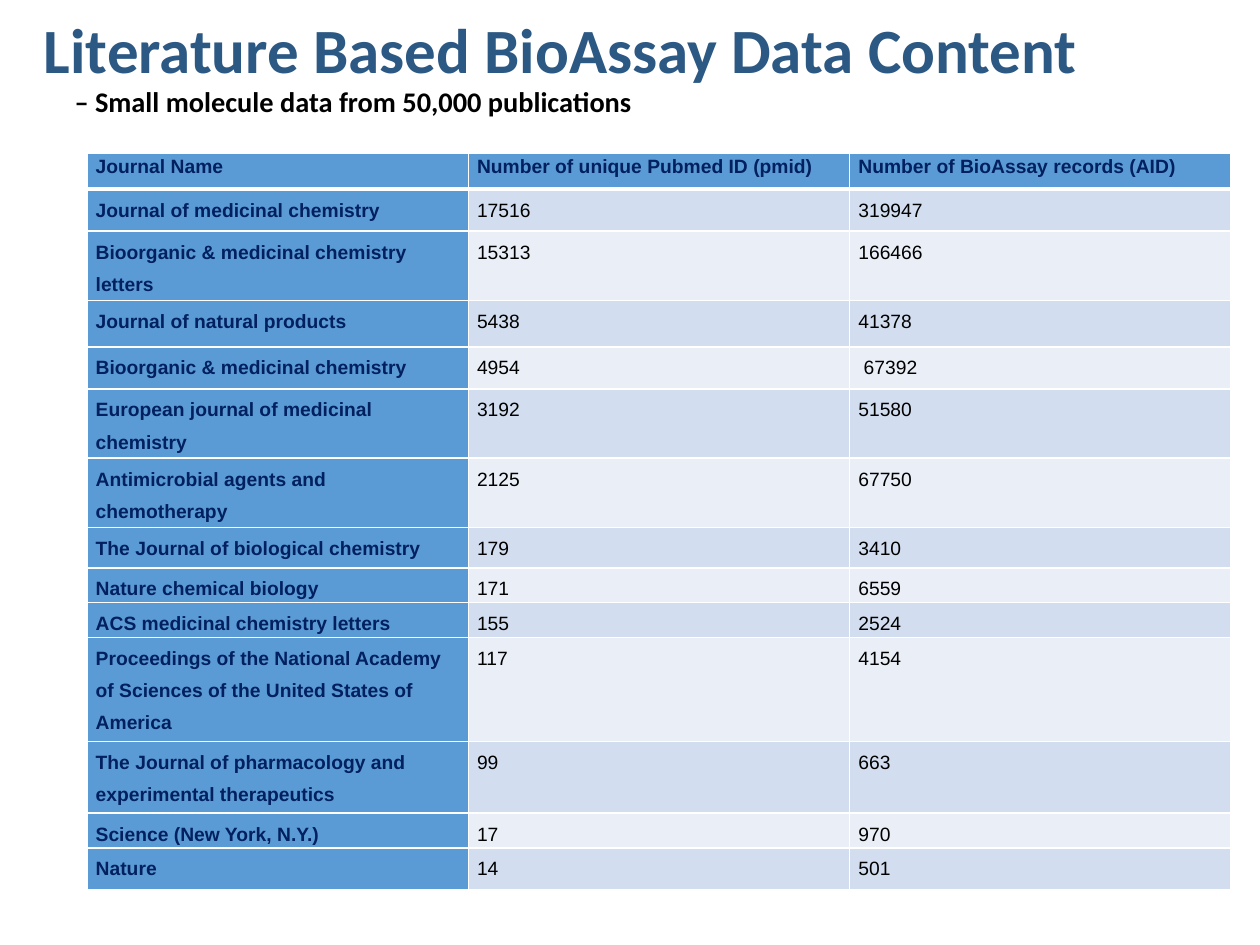
from dataclasses import dataclass

import pptx
import pptx.dml.color
import pptx.enum.text
import pptx.oxml
import pptx.oxml.ns
import pptx.util

Pt = pptx.util.Pt


@dataclass(frozen=True)
class Theme:
    title: str = "2C5884"
    black: str = "000000"
    navy: str = "002060"
    header: str = "5B9BD5"
    odd_row: str = "D2DEEF"
    even_row: str = "EAEFF7"
    border: str = "FFFFFF"
    title_size: float = 36
    subtitle_size: float = 16.2
    table_size: float = 11


theme = Theme()


def write(paragraph, text, color, paragraph_format, font_format):
    """Fill a paragraph with one run and apply both dicts of format values."""
    run = paragraph.add_run()
    run.text = text
    for name, value in paragraph_format.items():
        setattr(paragraph, name, value)
    for name, value in font_format.items():
        setattr(run.font, name, value)
    run.font.color.rgb = pptx.dml.color.RGBColor.from_string(color)


def add_border(cell, side, width):
    cell.fill.background()
    properties = cell._tc.get_or_add_tcPr()
    line = pptx.oxml.parse_xml(
        f'<a:ln{side} {pptx.oxml.ns.nsdecls("a")} w="{Pt(width)}">'
        f'<a:solidFill><a:srgbClr val="{theme.border}"/></a:solidFill></a:ln{side}>'
    )
    # Borders must come before the fill in the cell properties.
    properties.insert(len(properties) - 1, line)


presentation = pptx.Presentation()
presentation.slide_width = Pt(720)
presentation.slide_height = Pt(540)
slide = presentation.slides.add_slide(presentation.slide_layouts[6])

# Title and subtitle
title_box = slide.shapes.add_textbox(Pt(18), Pt(18.5), Pt(702), Pt(48))
title_frame = title_box.text_frame
title_frame.word_wrap = True
title_frame.vertical_anchor = pptx.enum.text.MSO_ANCHOR.MIDDLE
title_lines = [
    ("Literature Based BioAssay Data Content", theme.title, theme.title_size, 0, 0),
    ("– Small molecule data from 50,000 publications", theme.black,
     theme.subtitle_size, 5.4, 17.5),
]
for index, (text, color, size, space_before, indent) in enumerate(title_lines):
    paragraph = title_frame.add_paragraph() if index else title_frame.paragraphs[0]
    write(paragraph, text, color,
          {"line_spacing": 0.7, "space_before": Pt(space_before)},
          {"name": "Calibri", "size": Pt(size), "bold": True})
    paragraph._p.get_or_add_pPr().set("marL", str(Pt(indent)))

# Journal table: height of each row in points, then its cells
journal_rows = [
    (20.6, "Journal Name", "Number of unique Pubmed ID (pmid)",
     "Number of BioAssay records (AID)"),
    (24, "Journal of medicinal chemistry", "17516", "319947"),
    (36.6, "Bioorganic & medicinal chemistry letters", "15313", "166466"),
    (26.6, "Journal of natural products", "5438", "41378"),
    (24, "Bioorganic & medicinal chemistry", "4954", " 67392"),
    (36.6, "European journal of medicinal chemistry", "3192", "51580"),
    (36.6, "Antimicrobial agents and chemotherapy", "2125", "67750"),
    (23, "The Journal of biological chemistry", "179", "3410"),
    (18.3, "Nature chemical biology", "171", "6559"),
    (18.3, "ACS medicinal chemistry letters", "155", "2524"),
    (55.2, "Proceedings of the National Academy of Sciences "
     "of the United States of America", "117", "4154"),
    (41, "The Journal of pharmacology and experimental therapeutics", "99", "663"),
    (18.3, "Science (New York, N.Y.)", "17", "970"),
    (24.2, "Nature", "14", "501"),
]
column_count = 3
column_width = 217.9
table = slide.shapes.add_table(
    len(journal_rows), column_count, Pt(49.7), Pt(87.4),
    Pt(column_count * column_width), Pt(sum(row[0] for row in journal_rows)),
).table
table.first_col = True
for column in table.columns:
    column.width = Pt(column_width)

cell_margins = {"margin_left": Pt(5), "margin_right": Pt(5),
                "margin_top": 0, "margin_bottom": 0}
for row_index, (height, *texts) in enumerate(journal_rows):
    table.rows[row_index].height = Pt(height)
    row_fill = theme.odd_row if row_index % 2 else theme.even_row
    for column_index, text in enumerate(texts):
        cell = table.cell(row_index, column_index)
        is_heading = row_index == 0 or column_index == 0
        for name, value in cell_margins.items():
            setattr(cell, name, value)
        border_widths = {"L": 1, "R": 1, "T": 3 if row_index == 1 else 1,
                         "B": 3 if row_index == 0 else 1}
        for side, width in border_widths.items():
            add_border(cell, side, width)
        cell.fill.solid()
        cell.fill.fore_color.rgb = pptx.dml.color.RGBColor.from_string(
            theme.header if is_heading else row_fill)
        write(cell.text_frame.paragraphs[0], text,
              theme.navy if is_heading else theme.black,
              {"line_spacing": 1.5 if row_index else 1.15},
              {"name": "Arial", "size": Pt(theme.table_size), "bold": is_heading})

presentation.save("out.pptx")
